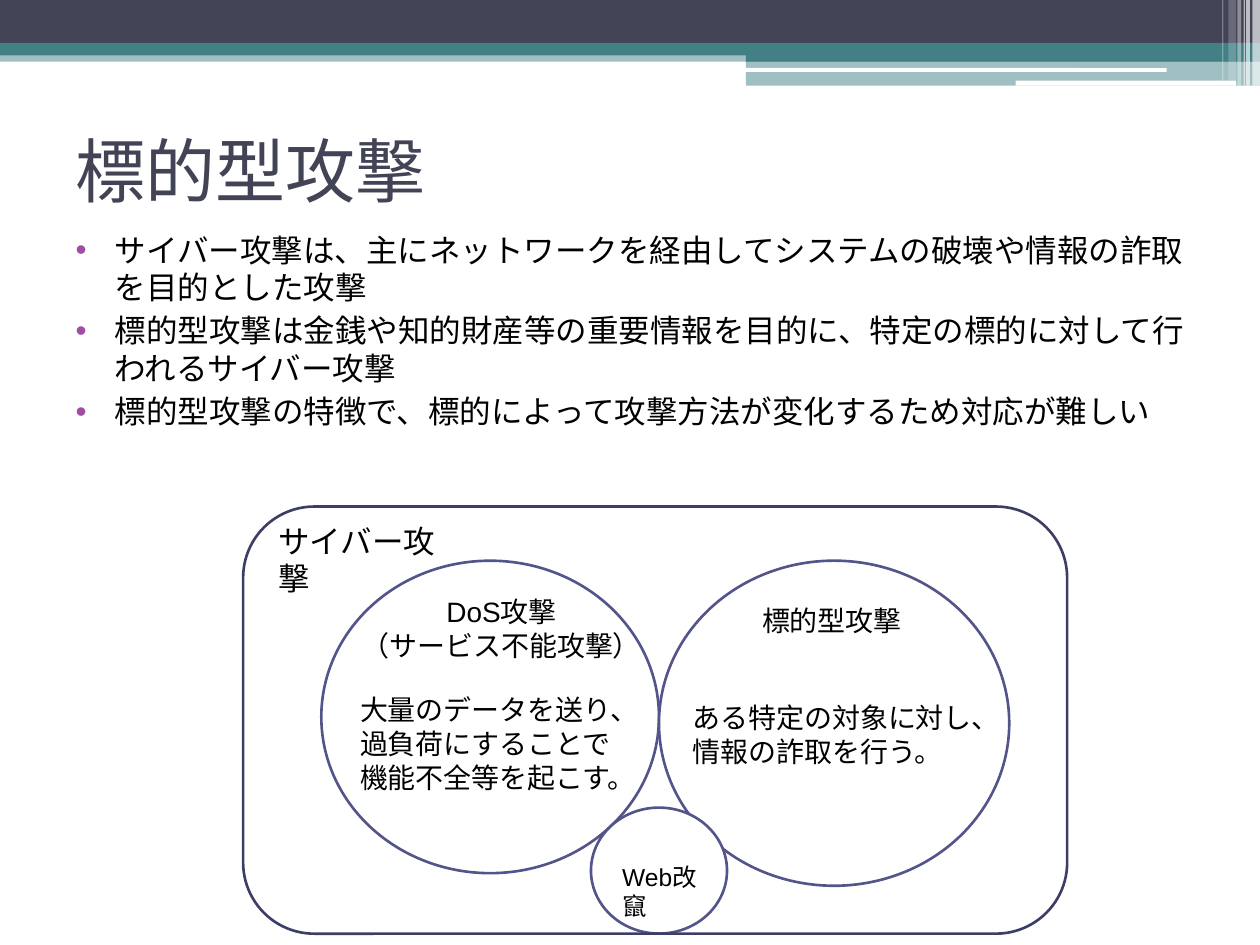
from lxml import etree
from pptx import Presentation
from pptx.dml.color import RGBColor
from pptx.enum.shapes import MSO_SHAPE
from pptx.enum.text import MSO_ANCHOR, MSO_AUTO_SIZE, PP_ALIGN
from pptx.oxml.ns import qn
from pptx.util import Inches, Pt

RECTANGLE = MSO_SHAPE.RECTANGLE
ROUNDED = MSO_SHAPE.ROUNDED_RECTANGLE
OVAL = MSO_SHAPE.OVAL
LEFT, CENTER = PP_ALIGN.LEFT, PP_ALIGN.CENTER

WHITE = RGBColor(0xFF, 0xFF, 0xFF)
BLACK = RGBColor(0, 0, 0)
NAVY = RGBColor(0x42, 0x44, 0x56)
TEAL = RGBColor(0x43, 0x80, 0x86)
PURPLE = RGBColor(0xA0, 0x4D, 0xA3)
CIRCLE_LINE = RGBColor(0x53, 0x54, 0x8A)
FRAME_LINE = RGBColor(0x3D, 0x3E, 0x66)

BULLETS = [
    "サイバー攻撃は、主にネットワークを経由してシステムの破壊や情報の詐取を目的とした攻撃",
    "標的型攻撃は金銭や知的財産等の重要情報を目的に、特定の標的に対して行われるサイバー攻撃",
    "標的型攻撃の特徴で、標的によって攻撃方法が変化するため対応が難しい",
]


def place(shape, left, top, width, height):
    shape.left, shape.top = Inches(left), Inches(top)
    shape.width, shape.height = Inches(width), Inches(height)


def style_font(font, name, size, color):
    font.name = name
    font.size = Pt(size)
    font.color.rgb = color


def add_band(shapes, kind, box, color, opacity=100):
    band = shapes.add_shape(kind, *map(Inches, box))
    band.shadow.inherit = False
    band.line.fill.background()
    band.fill.solid()
    band.fill.fore_color.rgb = color
    if opacity < 100:
        color_element = band.fill._xPr.find(qn("a:solidFill"))[0]
        etree.SubElement(color_element, qn("a:alpha"), val=str(opacity * 1000))


def add_header(slide, left, top, width):
    half = left + 5.92
    half_width = width - 5.92
    bands = [
        (left, 0.4, width, 0.09, TEAL, 50),
        (left, 0, width, 0.34, NAVY, 100),
        (left, 0.34, width, 0.1, TEAL, 100),
        (half, 0.39, half_width, 0.1, TEAL, 100),
        (half, 0.48, half_width, 0.2, TEAL, 50),
    ]
    for x, y, band_width, height, color, opacity in bands:
        add_band(slide.shapes, RECTANGLE, (x, top + y, band_width, height), color, opacity)
    for x, y, band_width, height in [(5.91, 0.54, 3.35, 0.03), (8.06, 0.64, 1.75, 0.04)]:
        add_band(slide.shapes, ROUNDED, (left + x, top + y, band_width, height), WHITE)
    stripes = [
        (9.94, 0.06, 0.68, 65), (9.89, 0.03, 0.68, 65), (9.87, 0.01, 0.68, 60),
        (9.82, 0.03, 0.68, 40), (9.75, 0.06, 0.64, 20), (9.7, 0.01, 0.64, 30),
    ]
    for x, stripe_width, height, opacity in stripes:
        add_band(slide.shapes, RECTANGLE, (left + x, top, stripe_width, height), WHITE, opacity)


def fill_title(slide, left, top, width, height):
    title = slide.shapes.title
    place(title, left, top, width, height)
    frame = title.text_frame
    frame.text = "標的型攻撃"
    frame.vertical_anchor = MSO_ANCHOR.MIDDLE
    frame.auto_size = MSO_AUTO_SIZE.NONE
    paragraph = frame.paragraphs[0]
    paragraph.alignment = LEFT
    style_font(paragraph.font, "Roboto", 40, NAVY)


def add_bullet(paragraph):
    properties = paragraph._p.get_or_add_pPr()
    properties.set("marL", str(Inches(0.31)))
    properties.set("indent", str(-Inches(0.31)))
    bullet_color = etree.SubElement(properties, qn("a:buClr"))
    etree.SubElement(bullet_color, qn("a:srgbClr"), val=str(PURPLE))
    etree.SubElement(properties, qn("a:buFont"), typeface="Arial")
    etree.SubElement(properties, qn("a:buChar"), char="•")


def fill_body(slide, left, top, width, height):
    body = slide.placeholders[1]
    place(body, left, top, width, height)
    frame = body.text_frame
    frame.text = "\n".join(BULLETS)
    frame.auto_size = MSO_AUTO_SIZE.NONE
    for paragraph in frame.paragraphs:
        paragraph.space_before = Pt(3)
        add_bullet(paragraph)
        style_font(paragraph.font, "Arial", 18, BLACK)


def add_outline(shapes, kind, box, color, filled):
    outline = shapes.add_shape(kind, *map(Inches, box))
    outline.shadow.inherit = False
    outline.line.color.rgb = color
    outline.line.width = Pt(1.5)
    if filled:
        outline.fill.solid()
        outline.fill.fore_color.rgb = WHITE
    else:
        outline.fill.background()


def add_label(shapes, box, text, size, alignment):
    label = shapes.add_textbox(*map(Inches, box))
    frame = label.text_frame
    frame.word_wrap = True
    frame.text = text
    for paragraph in frame.paragraphs:
        paragraph.alignment = alignment
        style_font(paragraph.font, "Arial", size, BLACK)


def add_attack_diagram(slide, left, top, width, height):
    shapes = slide.shapes.add_group_shape().shapes
    circles = [(0.62, 0.43, 2.68, 2.48), (3.3, 0.43, 2.78, 2.58), (2.76, 2.39, 1.08, 1)]
    for x, y, circle_width, circle_height in circles:
        box = (left + x, top + y, circle_width, circle_height)
        add_outline(shapes, OVAL, box, CIRCLE_LINE, True)
    add_outline(shapes, ROUNDED, (left, top, width, height), FRAME_LINE, False)
    labels = [
        (0.56, 0.65, 2.98, 0.64, "DoS攻撃\n（サービス不能攻撃）", 16, CENTER),
        (4.02, 0.72, 1.34, 0.34, "標的型攻撃", 16, LEFT),
        (2.91, 2.77, 0.87, 0.3, "Web改竄", 14, LEFT),
        (0.83, 1.43, 2.37, 0.82, "大量のデータを送り、過負荷にすることで機能不全等を起こす。", 16, LEFT),
        (3.47, 1.49, 2.46, 0.58, "ある特定の対象に対し、情報の詐取を行う。", 16, LEFT),
        (0.18, 0.07, 1.68, 0.37, "サイバー攻撃", 18, LEFT),
    ]
    for x, y, label_width, label_height, text, size, alignment in labels:
        box = (left + x, top + y, label_width, label_height)
        add_label(shapes, box, text, size, alignment)


def main():
    presentation = Presentation()
    presentation.slide_width = Inches(10)
    presentation.slide_height = Inches(7.5)
    slide = presentation.slides.add_slide(presentation.slide_layouts[1])
    add_header(slide, 0, 0, 10)
    fill_title(slide, 0.5, 0.76, 9, 1.17)
    fill_body(slide, 0.5, 1.78, 9, 5)
    add_attack_diagram(slide, 1.93, 4.02, 6.54, 3.39)
    presentation.save("out.pptx")


if __name__ == "__main__":
    main()
